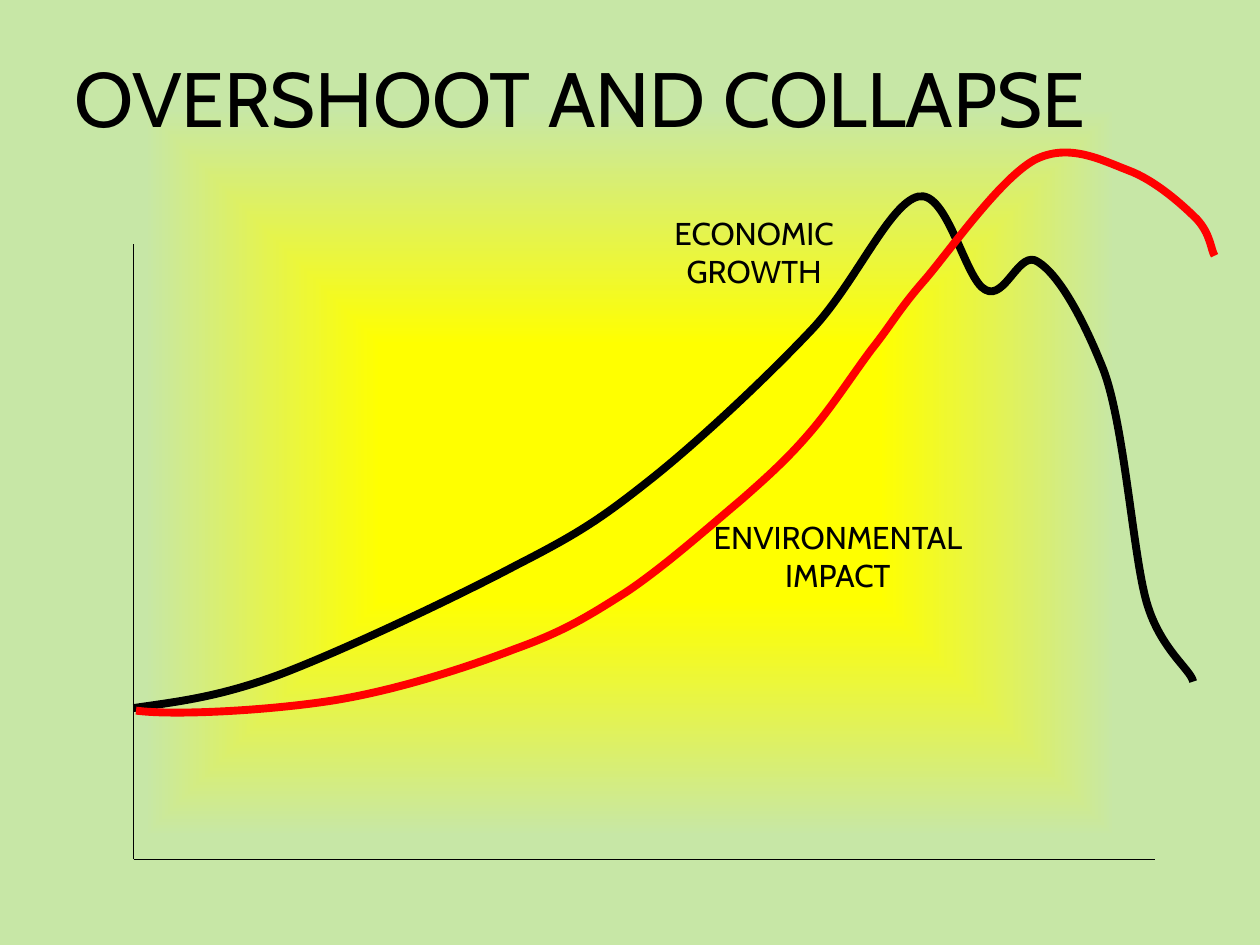
from dataclasses import dataclass, field

from pptx import Presentation
from pptx.dml.color import RGBColor
from pptx.enum.shapes import MSO_CONNECTOR
from pptx.enum.text import MSO_ANCHOR, PP_ALIGN
from pptx.oxml import parse_xml
from pptx.oxml.ns import nsdecls, qn
from pptx.slide import Slide
from pptx.util import Inches, Pt
from lxml import etree

STRAIGHT = MSO_CONNECTOR.STRAIGHT
MIDDLE, TOP = MSO_ANCHOR.MIDDLE, MSO_ANCHOR.TOP
LEFT, CENTER = PP_ALIGN.LEFT, PP_ALIGN.CENTER

COLORS = {"ink": "000000", "impact": "FF0000", "glow": "FFFF00", "field": "C7E7A6"}

GROWTH_CURVE = [
    (1.06, 5.62),
    (1.39, 5.57), (1.72, 5.54), (2.23, 5.35),
    (2.73, 5.16), (3.62, 4.74), (4.11, 4.48),
    (4.6, 4.23), (4.78, 4.11), (5.17, 3.8),
    (5.56, 3.49), (6.09, 2.99), (6.44, 2.62),
    (6.79, 2.25), (7.06, 1.61), (7.29, 1.56),
    (7.52, 1.51), (7.66, 2.22), (7.82, 2.3),
    (7.98, 2.39), (8.09, 1.97), (8.24, 2.08),
    (8.4, 2.18), (8.59, 2.51), (8.76, 2.94),
    (8.92, 3.37), (8.99, 4.35), (9.09, 4.74),
    (9.19, 5.14), (9.45, 5.31), (9.47, 5.41),
]
IMPACT_CURVE = [
    (1.08, 5.64),
    (1.38, 5.68), (2.13, 5.64), (2.64, 5.56),
    (3.14, 5.48), (3.7, 5.3), (4.09, 5.15),
    (4.48, 5.01), (4.67, 4.89), (4.97, 4.7),
    (5.27, 4.5), (5.63, 4.18), (5.88, 3.97),
    (6.12, 3.76), (6.27, 3.62), (6.44, 3.42),
    (6.61, 3.22), (6.77, 2.97), (6.92, 2.77),
    (7.08, 2.57), (7.13, 2.46), (7.35, 2.21),
    (7.56, 1.96), (7.94, 1.42), (8.21, 1.27),
    (8.48, 1.13), (8.74, 1.27), (8.95, 1.35),
    (9.17, 1.43), (9.39, 1.63), (9.5, 1.74),
    (9.61, 1.86), (9.61, 1.98), (9.64, 2.03),
]


def rgb(name):
    return RGBColor.from_string(COLORS[name])


def write_text(text_frame, text, *, font="Cabin", size=18, color="ink", align=LEFT):
    paragraph = text_frame.paragraphs[0]
    paragraph.alignment = align
    run = paragraph.add_run()
    run.text = text
    run.font.name = font
    run.font.size = Pt(size)
    run.font.color.rgb = rgb(color)


@dataclass
class SlideBuilder:
    slide: Slide
    font: str = "Cabin"
    axis_width: float = 0.75
    curve_width: float = 4.5
    origin: tuple = field(default=(1.06, 6.82))

    def background(self, stops):
        fill = self.slide.background.fill
        fill.gradient()
        for stop, (position, color, opacity) in zip(fill.gradient_stops, stops):
            stop.position = position
            stop.color.rgb = rgb(color)
        gradient = self.slide.element.find(".//" + qn("a:gradFill"))
        for element, (position, color, opacity) in zip(gradient.iter(qn("a:srgbClr")), stops):
            etree.SubElement(element, qn("a:alpha")).set("val", str(opacity * 1000))
        gradient.replace(gradient.find(qn("a:lin")), parse_xml(
            f'<a:path {nsdecls("a")} path="shape">'
            '<a:fillToRect l="50000" t="50000" r="50000" b="50000"/></a:path>'))

    def text(self, text, left, top, width, height, anchor=TOP, **text_format):
        box = self.slide.shapes.add_textbox(
            Inches(left), Inches(top), Inches(width), Inches(height))
        box.text_frame.word_wrap = True
        box.text_frame.vertical_anchor = anchor
        write_text(box.text_frame, text, font=self.font, **text_format)

    def axis(self, end):
        points = [Inches(value) for value in (*self.origin, *end)]
        connector = self.slide.shapes.add_connector(STRAIGHT, *points)
        connector.line.color.rgb = rgb("ink")
        connector.line.width = Pt(self.axis_width)
        etree.SubElement(connector.element.spPr, qn("a:effectLst"))

    def curve(self, points, color):
        start, *rest = [(Inches(x), Inches(y)) for x, y in points]
        builder = self.slide.shapes.build_freeform(*start)
        builder.add_line_segments(rest, close=False)
        shape = builder.convert_to_shape()
        segments = list(shape.element.iter(qn("a:lnTo")))
        for index in range(0, len(segments), 3):
            bezier = etree.Element(qn("a:cubicBezTo"))
            segments[index].addprevious(bezier)
            for segment in segments[index:index + 3]:
                bezier.append(segment[0])
                segment.getparent().remove(segment)
        shape.shadow.inherit = False
        shape.fill.background()
        shape.line.color.rgb = rgb(color)
        shape.line.width = Pt(self.curve_width)


def main():
    presentation = Presentation()
    presentation.slide_width = Inches(10)
    presentation.slide_height = Inches(7.5)
    builder = SlideBuilder(presentation.slides.add_slide(presentation.slide_layouts[6]))

    builder.background([(0.27, "glow", 62), (0.77, "field", 81)])
    builder.text("OVERSHOOT AND COLLAPSE", 0.49, 0.14, 9, 1.25, anchor=MIDDLE, size=44)
    builder.axis((1.06, 1.94))
    builder.axis((9.17, 6.82))
    builder.curve(GROWTH_CURVE, "ink")
    builder.text("ECONOMIC GROWTH", 5.16, 1.65, 1.65, 0.71, align=CENTER)
    builder.text("ENVIRONMENTAL IMPACT", 5.31, 4.06, 2.68, 0.71, align=CENTER)
    builder.curve(IMPACT_CURVE, "impact")

    presentation.save("out.pptx")


if __name__ == "__main__":
    main()
